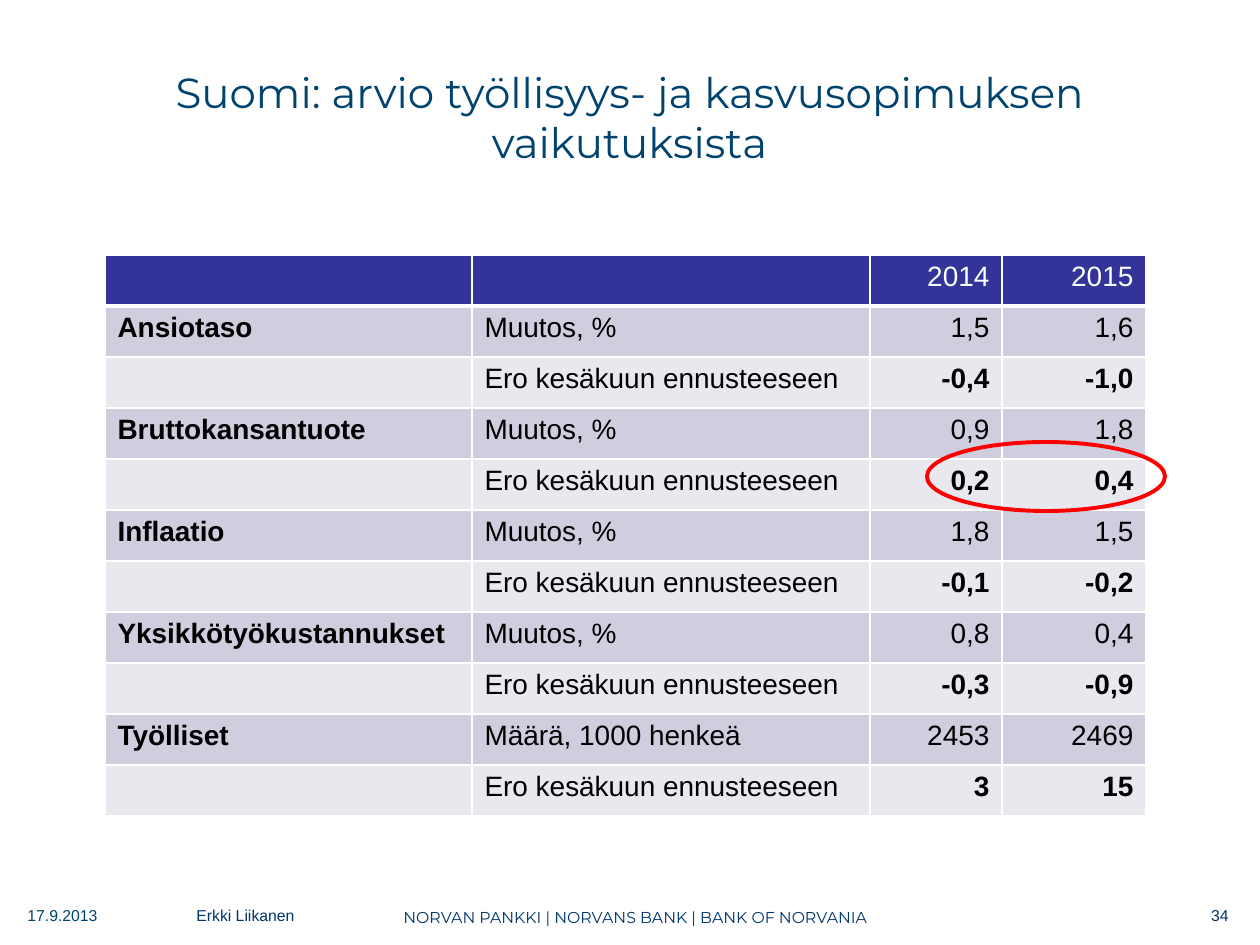
import pptx
import pptx.dml.color
import pptx.enum.shapes
import pptx.enum.text
import pptx.oxml
import pptx.oxml.ns
import pptx.util

PX = 914400 / 126
ALIGN = pptx.enum.text.PP_ALIGN
NAVY, BLUE = "00356C", "00436F"
COLUMN_WIDTHS = (367, 398, 132, 144)
ROW_HEIGHT = 51
DIFFERENCE = "Ero kesäkuun ennusteeseen"
CHANGE = "Muutos, %"
INDICATORS = (
    ("Ansiotaso", CHANGE, ("1,5", "1,6"), ("-0,4", "-1,0")),
    ("Bruttokansantuote", CHANGE, ("0,9", "1,8"), ("0,2", "0,4")),
    ("Inflaatio", CHANGE, ("1,8", "1,5"), ("-0,1", "-0,2")),
    ("Yksikkötyökustannukset", CHANGE, ("0,8", "0,4"), ("-0,3", "-0,9")),
    ("Työlliset", "Määrä, 1000 henkeä", ("2453", "2469"), ("3", "15")),
)


def px(*lengths):
    return [pptx.util.Emu(round(length * PX)) for length in lengths]


def color(value):
    return pptx.dml.color.RGBColor.from_string(value)


def write(text_frame, text, size, font_name, font_color, align=ALIGN.LEFT, bold=False):
    text_frame.text = text
    paragraph = text_frame.paragraphs[0]
    paragraph.alignment = align
    for run in paragraph.runs:
        run.font.size = pptx.util.Pt(size)
        run.font.name = font_name
        run.font.bold = bold
        run.font.color.rgb = color(font_color)


def add_title(slide, text, box):
    title = slide.shapes.title
    title.left, title.top, title.width, title.height = px(*box)
    title.text_frame.auto_size = pptx.enum.text.MSO_AUTO_SIZE.NONE
    title.text_frame.vertical_anchor = pptx.enum.text.MSO_ANCHOR.MIDDLE
    write(title.text_frame, text, 24, "Montserrat", BLUE, ALIGN.CENTER)


def add_footer_text(slide, text, box, font_color=NAVY, align=ALIGN.LEFT, font_name="Arial"):
    text_box = slide.shapes.add_textbox(*px(*box))
    text_box.text_frame.word_wrap = True
    write(text_box.text_frame, text, 9, font_name, font_color, align)


def set_borders(cell, bottom_width):
    """Draw white cell borders, with their widths in points."""
    properties = cell._tc.get_or_add_tcPr()
    widths = (("lnL", 1), ("lnR", 1), ("lnT", 1), ("lnB", bottom_width))
    for position, (tag, width) in enumerate(widths):
        properties.insert(position, pptx.oxml.parse_xml(
            f'<a:{tag} {pptx.oxml.ns.nsdecls("a")} w="{width * 12700}">'
            '<a:solidFill><a:srgbClr val="FFFFFF"/></a:solidFill>'
            f'</a:{tag}>'))


def table_rows():
    rows = [("", "", "2014", "2015")]
    for name, measure, values, differences in INDICATORS:
        rows.append((name, measure, *values))
        rows.append(("", DIFFERENCE, *differences))
    return rows


def add_forecast_table(slide, left, top):
    rows = table_rows()
    box = px(left, top, sum(COLUMN_WIDTHS), ROW_HEIGHT * len(rows))
    table = slide.shapes.add_table(len(rows), len(COLUMN_WIDTHS), *box).table
    for column, width in zip(table.columns, px(*COLUMN_WIDTHS)):
        column.width = width
    for row_index, texts in enumerate(rows):
        is_header = row_index == 0
        is_difference = not is_header and row_index % 2 == 0
        fill = "333399" if is_header else "E8E8EF" if is_difference else "CECEDE"
        for column_index, text in enumerate(texts):
            cell = table.cell(row_index, column_index)
            cell.fill.solid()
            cell.fill.fore_color.rgb = color(fill)
            set_borders(cell, 3 if is_header else 1)
            is_number = column_index >= 2
            write(cell.text_frame, text, 16, "Arial",
                  "FFFFFF" if is_header else "000000",
                  ALIGN.RIGHT if is_number else ALIGN.LEFT,
                  bold=column_index == 0 or (is_number and is_difference))


def add_highlight(slide, box):
    ellipse = slide.shapes.add_shape(pptx.enum.shapes.MSO_SHAPE.OVAL, *px(*box))
    ellipse.shadow.inherit = False
    ellipse.fill.background()
    ellipse.line.color.rgb = color("FF0000")
    ellipse.line.width = pptx.util.Pt(2.25)


def main():
    presentation = pptx.Presentation()
    presentation.slide_width, presentation.slide_height = px(1260, 945)
    slide = presentation.slides.add_slide(presentation.slide_layouts[5])
    add_footer_text(slide, "NORVAN PANKKI | NORVANS BANK | BANK OF NORVANIA",
                    (73, 902, 1124, 35), align=ALIGN.CENTER, font_name="Montserrat")
    add_title(slide, "Suomi: arvio työllisyys- ja kasvusopimuksen vaikutuksista",
              (73, 38, 1113, 158))
    add_forecast_table(slide, 105, 255)
    add_footer_text(slide, "34", (1106, 900, 135, 40), align=ALIGN.RIGHT)
    add_highlight(slide, (927, 442, 238, 69))
    add_footer_text(slide, "17.9.2013", (15, 900, 159, 45), BLUE)
    add_footer_text(slide, "Erkki Liikanen", (184, 900, 198, 45))
    presentation.save("out.pptx")


if __name__ == "__main__":
    main()
